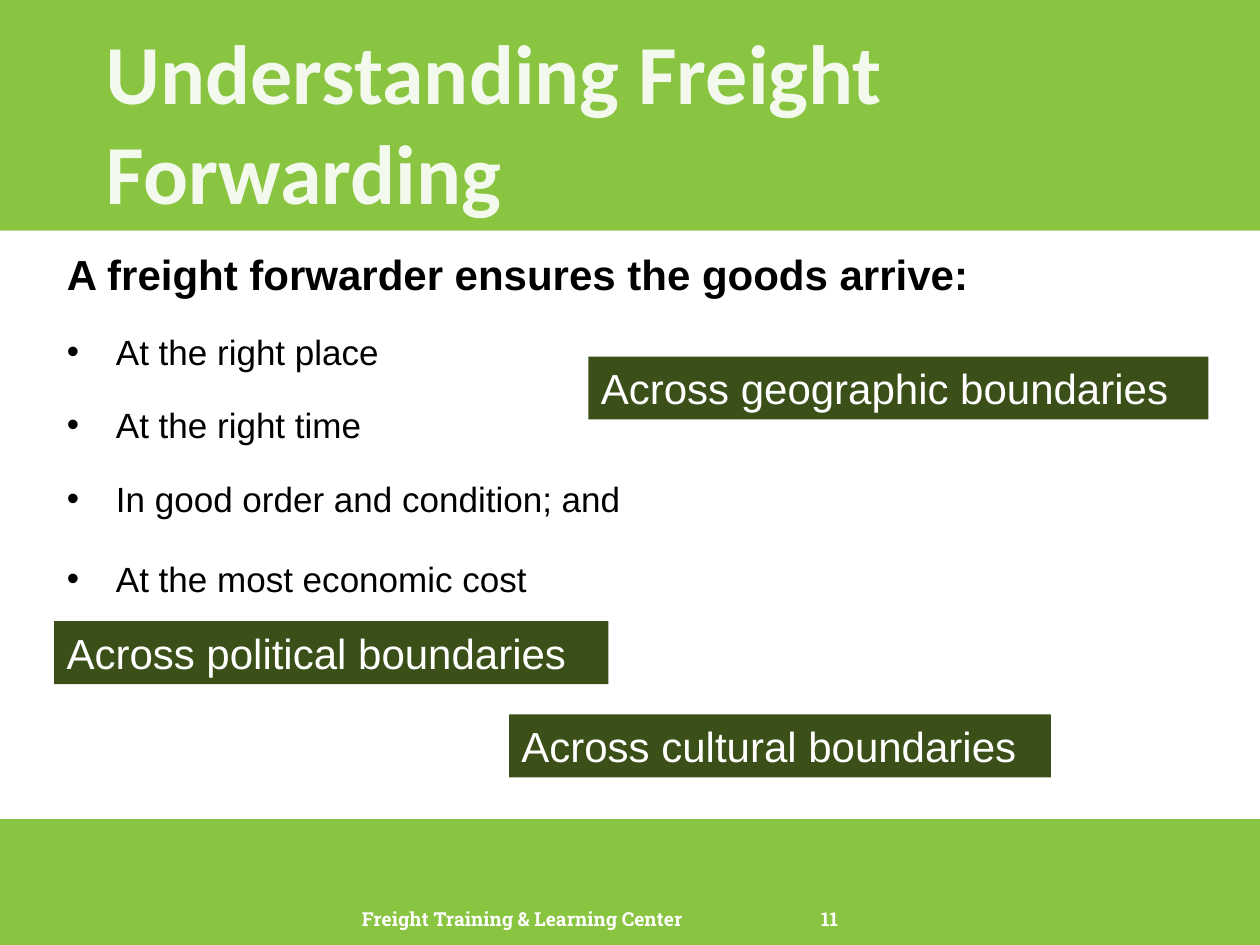
from lxml.etree import SubElement
from pptx import Presentation
from pptx.dml.color import RGBColor
from pptx.enum.shapes import MSO_SHAPE
from pptx.enum.text import MSO_ANCHOR, MSO_AUTO_SIZE, PP_ALIGN
from pptx.oxml.ns import qn
from pptx.util import Emu, Pt

EMU_PER_PX = 9144
GREEN = RGBColor(0x89, 0xC5, 0x40)
DARK_GREEN = RGBColor(0x3B, 0x4F, 0x18)
WHITE = RGBColor(0xFF, 0xFF, 0xFF)
BLACK = RGBColor(0x00, 0x00, 0x00)


def px(length):
    return Emu(length * EMU_PER_PX)


def place(item, box):
    item.left, item.top, item.width, item.height = map(px, box)


def add_run(para, text, size, color, font="Arial", bold=False):
    span = para.add_run()
    span.text = text
    span.font.name = font
    span.font.size = Pt(size)
    span.font.bold = bold
    span.font.color.rgb = color
    return span


def add_panel(page, box, color):
    panel = page.shapes.add_shape(MSO_SHAPE.RECTANGLE, *map(px, box))
    panel.shadow.inherit = False
    panel.fill.solid()
    panel.fill.fore_color.rgb = color
    panel.line.fill.background()
    return panel


def set_indent(para, hanging, bullet=None):
    properties = para._p.get_or_add_pPr()
    properties.set("marL", str(px(hanging)))
    properties.set("indent", str(px(-hanging)))
    if bullet:
        SubElement(properties, qn("a:buFont")).set("typeface", "Arial")
        SubElement(properties, qn("a:buChar")).set("char", bullet)
    else:
        SubElement(properties, qn("a:buNone"))


def fill_title(page, box, text):
    title = page.shapes.title
    place(title, box)
    frame = title.text_frame
    frame.auto_size = MSO_AUTO_SIZE.NONE
    frame.vertical_anchor = MSO_ANCHOR.BOTTOM
    para = frame.paragraphs[0]
    para.alignment = PP_ALIGN.LEFT
    span = add_run(para, text, 48, WHITE, "Calibri", True)
    color = span._r.find(".//" + qn("a:srgbClr"))
    SubElement(color, qn("a:alpha")).set("val", "90000")


def fill_body(page, box, heading, items):
    body = page.placeholders[1]
    place(body, box)
    frame = body.text_frame
    frame.auto_size = MSO_AUTO_SIZE.NONE
    para = frame.paragraphs[0]
    set_indent(para, 38)
    para.space_before = Pt(0)
    add_run(para, heading, 24, BLACK, bold=True)
    for text, space in items:
        para = frame.add_paragraph()
        para.level = 1
        set_indent(para, 39, "•")
        para.space_before = Pt(space)
        add_run(para, text, 20, BLACK)


def add_label(page, box, text):
    frame = add_panel(page, box, DARK_GREEN).text_frame
    frame.word_wrap = True
    frame.vertical_anchor = MSO_ANCHOR.TOP
    para = frame.paragraphs[0]
    para.alignment = PP_ALIGN.LEFT
    add_run(para, text, 24, WHITE)


def add_footer(page, box, text, alignment):
    frame = page.shapes.add_textbox(*map(px, box)).text_frame
    frame.word_wrap = True
    frame.vertical_anchor = MSO_ANCHOR.MIDDLE
    para = frame.paragraphs[0]
    para.alignment = alignment
    add_run(para, text, 11, WHITE, "Roboto Slab", True)


def build_page(deck):
    page = deck.slides.add_slide(deck.slide_layouts[1])
    page.background.fill.solid()
    page.background.fill.fore_color.rgb = GREEN
    panel = add_panel(page, (0, 183, 1000, 467), WHITE)
    page.shapes._spTree.insert(2, panel._element)

    fill_title(page, (74, 21, 853, 160), "Understanding Freight Forwarding")
    fill_body(
        page,
        (43, 192, 907, 442),
        "A freight forwarder ensures the goods arrive:",
        [
            ("At the right place", 18),
            ("At the right time", 18),
            ("In good order and condition; and", 18),
            ("At the most economic cost", 22),
        ],
    )
    add_footer(page, (258, 717, 317, 25), "Freight Training & Learning Center ", PP_ALIGN.CENTER)
    add_footer(page, (575, 717, 100, 25), "11", PP_ALIGN.RIGHT)
    for kind, box in (
        ("political", (43, 493, 440, 50)),
        ("geographic", (467, 283, 492, 50)),
        ("cultural", (404, 567, 430, 50)),
    ):
        add_label(page, box, f"Across {kind} boundaries")


def main():
    deck = Presentation()
    deck.slide_width, deck.slide_height = px(1000), px(750)
    build_page(deck)
    deck.save("out.pptx")


if __name__ == "__main__":
    main()
